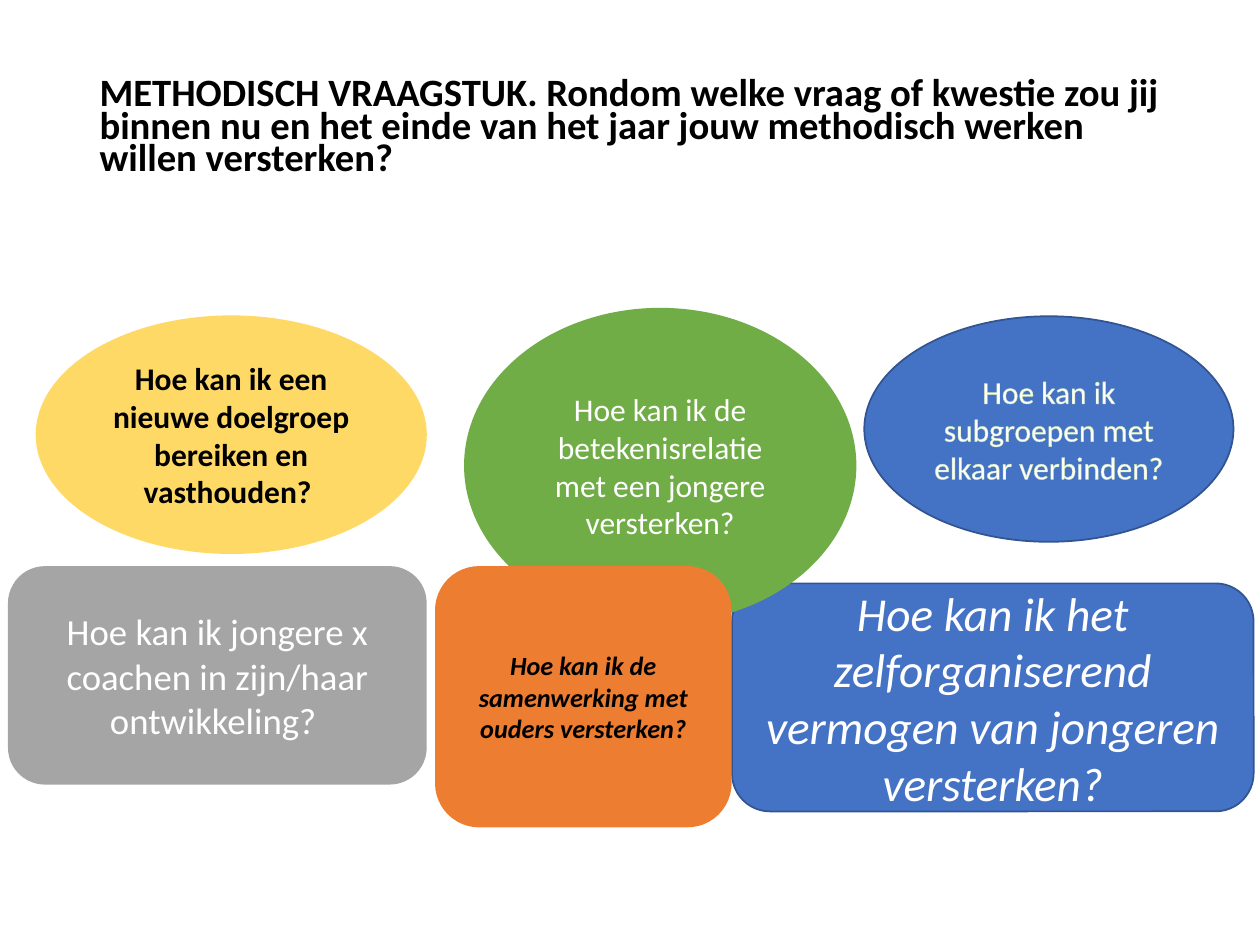
from lxml import etree
from pptx import Presentation
from pptx.dml.color import RGBColor
from pptx.enum.shapes import MSO_SHAPE
from pptx.enum.text import MSO_ANCHOR, PP_ALIGN
from pptx.oxml.ns import qn
from pptx.util import Inches, Pt

FONT = "Calibri"
BLACK, WHITE = "000000", "FFFFFF"
BLUE, NAVY, YELLOW = "4472C4", "325491", "FFD966"
GREY, GREEN, ORANGE = "A5A5A5", "70AD47", "ED7D31"
OVAL, CARD = MSO_SHAPE.OVAL, MSO_SHAPE.ROUNDED_RECTANGLE
UPPER_TOP, LOWER_TOP = 2.51, 4.5

TITLE = ("METHODISCH VRAAGSTUK. Rondom welke vraag of kwestie zou jij binnen nu "
         "en het einde van het jaar jouw methodisch werken willen versterken?")

# Back to front: text, preset, (left, top, width, height), fill, line, font
QUESTIONS = [
    ("Hoe kan ik het zelforganiserend vermogen van jongeren versterken?",
     CARD, (5.81, 4.63, 4.14, 1.81), BLUE, NAVY,
     dict(size=27, color=WHITE, italic=True)),
    ("Hoe kan ik een nieuwe doelgroep bereiken en vasthouden? ",
     OVAL, (0.29, UPPER_TOP, 3.09, 1.88), YELLOW, YELLOW,
     dict(size=18, color=BLACK, bold=True)),
    ("Hoe kan ik subgroepen met elkaar verbinden?",
     OVAL, (6.86, UPPER_TOP, 2.93, 1.79), BLUE, NAVY,
     dict(size=18, color=WHITE, outline="C5E0B4")),
    ("Hoe kan ik jongere x coachen in zijn/haar ontwikkeling? ",
     CARD, (0.07, LOWER_TOP, 3.31, 1.72), GREY, GREY,
     dict(size=21, color=WHITE)),
    ("Hoe kan ik de betekenisrelatie met een jongere versterken?",
     OVAL, (3.69, 2.45, 3.1, 2.49), GREEN, GREEN,
     dict(size=18, color=WHITE)),
    ("Hoe kan ik de samenwerking met ouders versterken?",
     CARD, (3.46, LOWER_TOP, 2.34, 2.06), ORANGE, ORANGE,
     dict(size=15, color=BLACK, bold=True, italic=True)),
]


def rgb(value):
    return RGBColor.from_string(value)


def outline_letters(run, color):
    line = etree.Element(qn("a:ln"), w=str(Pt(0.75)))
    fill = etree.SubElement(line, qn("a:solidFill"))
    etree.SubElement(fill, qn("a:srgbClr"), val=color)
    run.font._element.insert(0, line)


def write(frame, text, align, size, color, bold=False, italic=False, outline=None):
    frame.text = text
    frame.word_wrap = True
    paragraph = frame.paragraphs[0]
    paragraph.alignment = align
    run = paragraph.runs[0]
    font = run.font
    font.name, font.size, font.bold, font.italic = FONT, Pt(size), bold, italic
    font.color.rgb = rgb(color)
    if outline:
        outline_letters(run, outline)


def add_title(slide):
    title = slide.shapes.title
    title.left, title.top, title.width, title.height = map(
        Inches, (0.69, 0.4, 8.62, 1.45))
    frame = title.text_frame
    write(frame, TITLE, PP_ALIGN.LEFT, 22.1, BLACK, bold=True)
    frame.vertical_anchor = MSO_ANCHOR.TOP
    frame.margin_top = Inches(0.24)
    frame.paragraphs[0].line_spacing = 0.7


def add_question(slide, text, preset, box, fill, line, font):
    shape = slide.shapes.add_shape(preset, *map(Inches, box))
    shape.shadow.inherit = False
    shape.fill.solid()
    shape.fill.fore_color.rgb = rgb(fill)
    shape.line.color.rgb = rgb(line)
    shape.line.width = Pt(1)
    write(shape.text_frame, text, PP_ALIGN.CENTER, **font)
    shape.text_frame.vertical_anchor = MSO_ANCHOR.MIDDLE


def main():
    prs = Presentation()
    prs.slide_width, prs.slide_height = Inches(10), Inches(7.5)
    slide = prs.slides.add_slide(prs.slide_layouts[5])
    add_title(slide)
    for question in QUESTIONS:
        add_question(slide, *question)
    prs.save("out.pptx")


if __name__ == "__main__":
    main()
